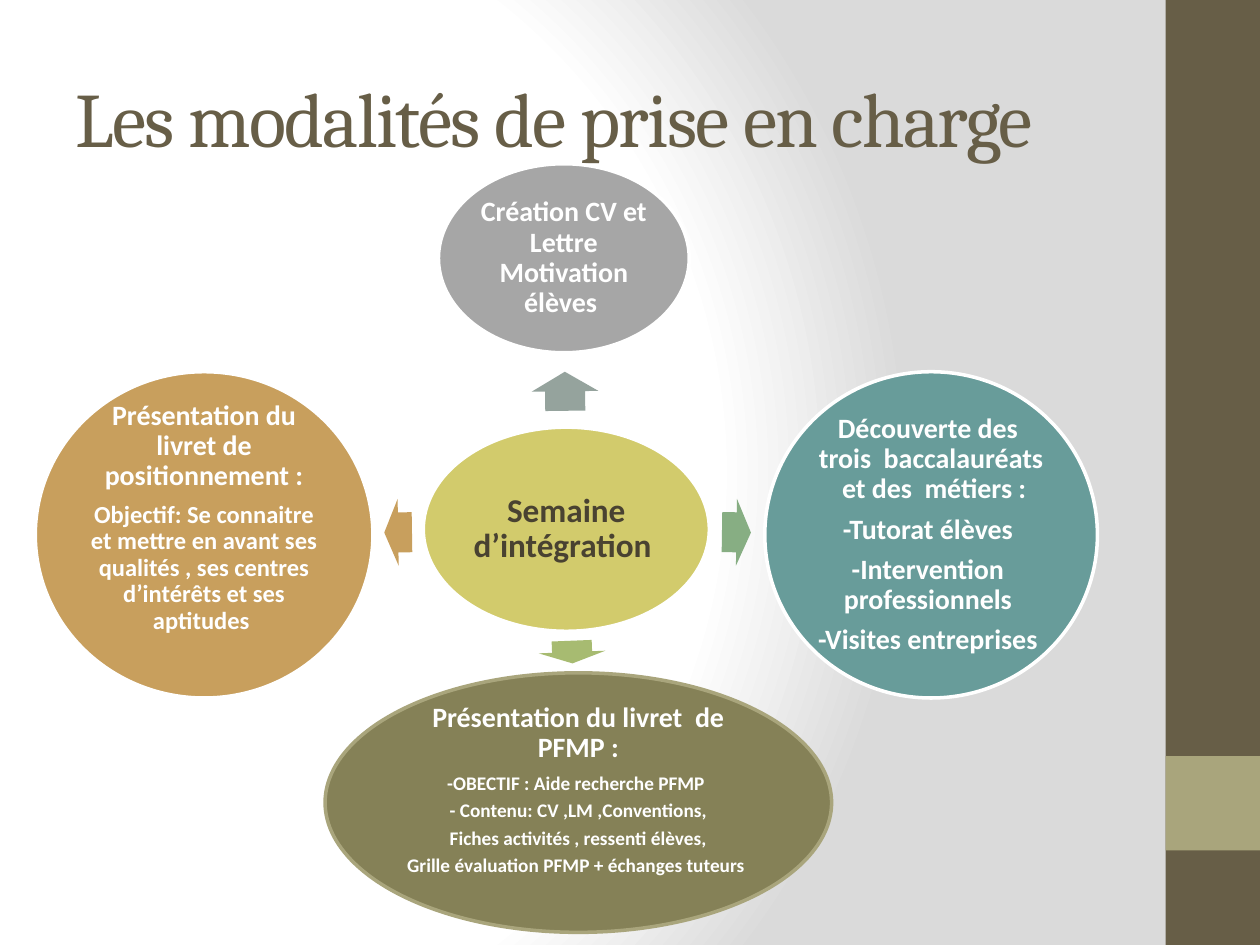
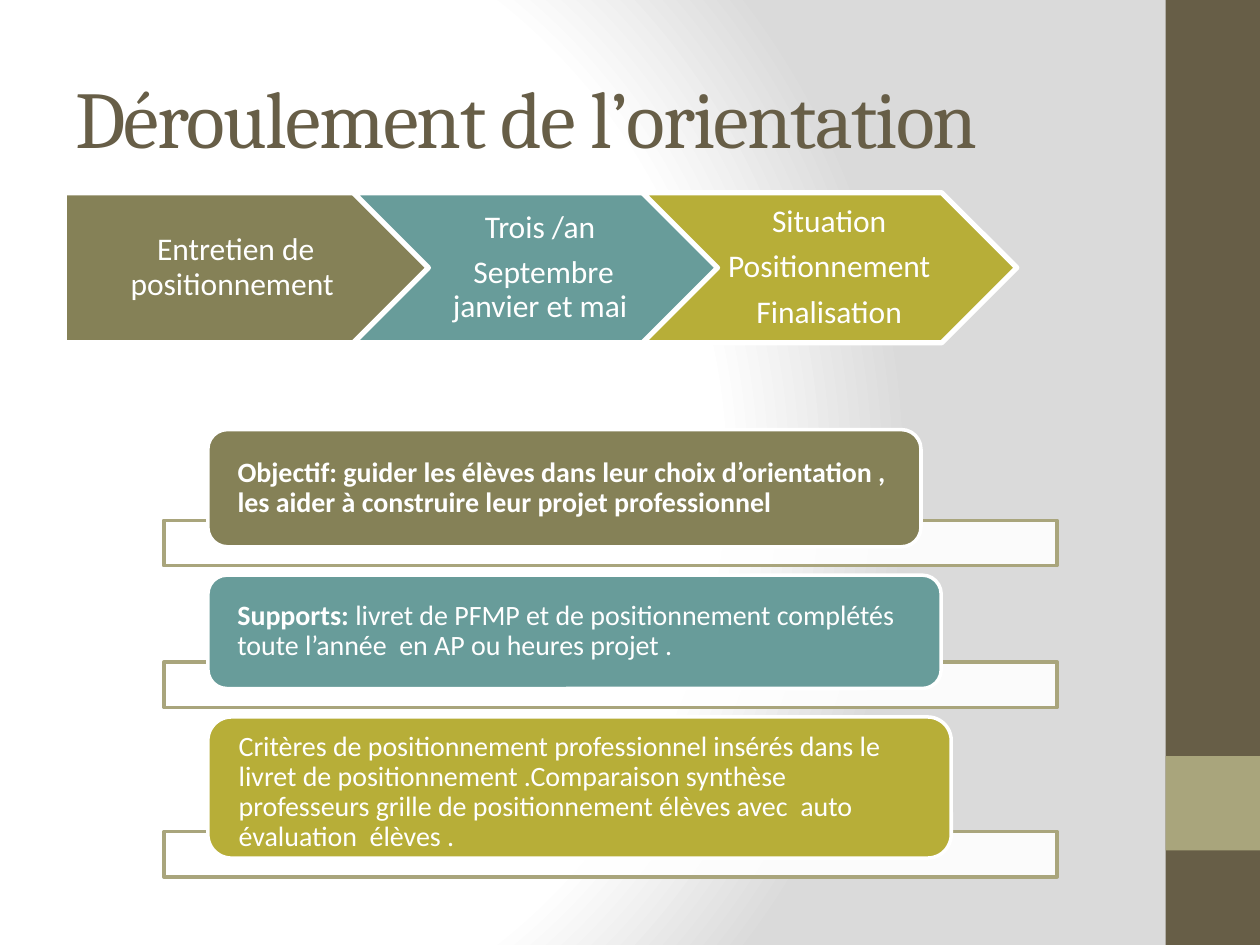
from pptx import Presentation, oxml
from pptx import util as u
from pptx.dml import color
from pptx.enum import shapes, text
from pptx.oxml import ns

RGBColor = color.RGBColor
Inches = u.Inches
SHAPE = shapes.MSO_SHAPE
ALIGN = text.PP_ALIGN

WHITE = RGBColor(0xFF, 0xFF, 0xFF)
BROWN = RGBColor(0x67, 0x5E, 0x47)
DARK_BROWN = RGBColor(0x49, 0x42, 0x31)
KHAKI = RGBColor(0xA9, 0xA5, 0x7C)
OLIVE = RGBColor(0x85, 0x81, 0x57)
TEAL = RGBColor(0x68, 0x9C, 0x9A)
MUSTARD = RGBColor(0xB7, 0xAE, 0x38)
YELLOW = RGBColor(0xD2, 0xCB, 0x6C)
GREY = RGBColor(0xA6, 0xA6, 0xA6)
OCHRE = RGBColor(0xC8, 0x9F, 0x5D)
GREY_GREEN = RGBColor(0x95, 0xA3, 0x9D)
GREEN = RGBColor(0x87, 0xAE, 0x83)
LIME = RGBColor(0xA7, 0xBB, 0x71)

TITLE_FONT = "Cambria"
BODY_FONT = "Calibri"
GRADIENT = f"""<a:gradFill rotWithShape="1" {ns.nsdecls("a")}><a:gsLst>
<a:gs pos="0"><a:srgbClr val="FFFFFF"/></a:gs>
<a:gs pos="75000"><a:srgbClr val="FFFFFF"/></a:gs>
<a:gs pos="100000"><a:srgbClr val="DADADA"/></a:gs></a:gsLst>
<a:path path="circle"><a:fillToRect l="20000" t="50000" r="100000" b="50000"/></a:path>
</a:gradFill>"""


def add_block(slide, kind, box, fill, line=None, line_width=2):
    shape = slide.shapes.add_shape(kind, *(Inches(length) for length in box))
    shape.shadow.inherit = False
    shape.fill.solid()
    shape.fill.fore_color.rgb = fill
    if line is None:
        shape.line.fill.background()
    else:
        shape.line.color.rgb = line
        shape.line.width = u.Pt(line_width)
    return shape


def style_run(run, size, bold, font_color):
    run.font.name = BODY_FONT
    run.font.size = u.Pt(size)
    run.font.bold = bold
    run.font.color.rgb = font_color


def write(shape, lines, size, bold=False, font_color=WHITE,
          align=ALIGN.CENTER, margins=(0.02, 0.02, 0.02, 0.02)):
    frame = shape.text_frame
    frame.word_wrap = True
    frame.vertical_anchor = text.MSO_ANCHOR.MIDDLE
    (frame.margin_left, frame.margin_top,
     frame.margin_right, frame.margin_bottom) = map(Inches, margins)
    for index, line in enumerate(lines):
        content, line_size = line if isinstance(line, tuple) else (line, size)
        paragraph = frame.paragraphs[0] if index == 0 else frame.add_paragraph()
        paragraph.text = content
        paragraph.alignment = align
        paragraph.line_spacing = 0.9
        paragraph.space_after = u.Pt(round(0.35 * line_size, 1))
        style_run(paragraph.runs[0], line_size, bold, font_color)
    return frame


def add_base(presentation, title, title_size):
    slide = presentation.slides.add_slide(presentation.slide_layouts[6])
    slide.background.fill.gradient()
    gradient = slide.element.find(".//" + ns.qn("a:gradFill"))
    gradient.getparent().replace(gradient, oxml.parse_xml(GRADIENT))
    add_block(slide, SHAPE.RECTANGLE, (9.25, 0, 0.75, 7.5), BROWN)
    add_block(slide, SHAPE.RECTANGLE, (9.25, 6, 0.75, 0.75), KHAKI)
    box = slide.shapes.add_textbox(Inches(0.5), Inches(0.3), Inches(8.33), Inches(1.25))
    frame = box.text_frame
    frame.word_wrap = True
    frame.vertical_anchor = text.MSO_ANCHOR.MIDDLE
    frame.text = title
    run = frame.paragraphs[0].runs[0]
    run.font.name = TITLE_FONT
    run.font.size = u.Pt(title_size)
    run.font.color.rgb = BROWN
    run.font._element.set("spc", "-100")
    return slide


def add_hub(slide, left, top):
    def place(x, y, width, height):
        return left + x, top + y, width, height

    arrows = [
        ((4.05, 1.54, 0.31, 0.53), 269.3, GREY_GREEN),
        ((5.45, 2.66, 0.23, 0.53), 0.9, GREEN),
        ((4.17, 3.61, 0.18, 0.53), 87.7, LIME),
        ((2.77, 2.66, 0.22, 0.53), 179.1, OCHRE),
    ]
    for box, rotation, fill in arrows:
        arrow = add_block(slide, SHAPE.RIGHT_ARROW, place(*box), fill)
        arrow.adjustments[0] = 0.6
        arrow.adjustments[1] = 0.5
        arrow.rotation = rotation

    center = add_block(slide, SHAPE.OVAL, place(3.08, 2.09, 2.27, 1.62), YELLOW, WHITE)
    write(center, ["Semaine d’intégration "], 19, True, DARK_BROWN, margins=(0.03,) * 4)

    bubbles = [
        ((3.2, 0, 1.99, 1.5), GREY, WHITE, 0.02,
         ["Création CV et Lettre Motivation élèves "]),
        ((5.79, 1.65, 2.64, 2.59), TEAL, WHITE, 0.02,
         ["Découverte des  trois  baccalauréats  et des  métiers :",
          "-Tutorat élèves ", "-Intervention  professionnels ",
          "-Visites entreprises "]),
        ((2.3, 4.04, 4.02, 2.06), OLIVE, KHAKI, 0.22,
         ["Présentation du livret  de PFMP :",
          ("-OBECTIF : Aide recherche PFMP ", 11),
          ("- Contenu: CV ,LM ,Conventions,", 11),
          ("Fiches activités , ressenti élèves,", 11),
          ("Grille évaluation PFMP + échanges tuteurs ", 11)]),
        ((0, 1.65, 2.68, 2.59), OCHRE, WHITE, 0.29,
         ["Présentation du livret de positionnement :",
          ("Objectif: Se connaitre et mettre en avant ses qualités , "
           "ses centres d’intérêts et ses aptitudes ", 14)]),
    ]
    for box, fill, line, bottom, lines in bubbles:
        bubble = add_block(slide, SHAPE.OVAL, place(*box), fill, line)
        write(bubble, lines, 16, True, margins=(0.02, 0.02, 0.02, bottom))


def add_steps(slide, left, top, width=2.97, height=1.19, pitch=2.295):
    steps = [
        (SHAPE.PENTAGON, OLIVE, ["Entretien de positionnement "]),
        (SHAPE.CHEVRON, TEAL, ["Trois /an ", "Septembre janvier et mai "]),
        (SHAPE.CHEVRON, MUSTARD, ["Situation ", "Positionnement ", "Finalisation "]),
    ]
    for index, (kind, fill, lines) in enumerate(steps):
        box = (left + index * pitch, top, width, height)
        step = add_block(slide, kind, box, fill, WHITE, 3)
        write(step, lines, 18, margins=(0.08, 0.05, 0.03, 0.05))


def add_cards(slide, left, top, width):
    cards = [
        (5.66, 0.93, OLIVE, 0,
         "Objectif: guider les élèves dans leur choix d’orientation , "
         "les aider à construire leur projet professionnel", ""),
        (5.82, 0.9, TEAL, 0, "Supports: ",
         "livret de PFMP et de positionnement complétés toute l’année  "
         "en AP ou heures projet ."),
        (5.9, 1.12, MUSTARD, 0.08, "",
         "Critères de positionnement professionnel insérés dans le livret de "
         "positionnement .Comparaison synthèse professeurs grille de "
         "positionnement élèves avec  auto évaluation  élèves ."),
    ]
    for card_width, height, fill, inset, strong, plain in cards:
        strip = add_block(slide, SHAPE.RECTANGLE,
                          (left, top + height - 0.21, width, 0.36), WHITE, KHAKI)
        white = strip.fill._xPr.find(".//" + ns.qn("a:srgbClr"))
        white.append(oxml.parse_xml(f'<a:alpha val="90000" {ns.nsdecls("a")}/>'))
        card = add_block(slide, SHAPE.ROUNDED_RECTANGLE,
                         (left + 0.35, top, card_width, height), fill, WHITE)
        frame = write(card, [strong or plain], 16, bool(strong), align=ALIGN.LEFT,
                      margins=(0.19, inset, 0.19, 0))
        if strong and plain:
            run = frame.paragraphs[0].add_run()
            run.text = plain
            style_run(run, 16, False, WHITE)
        top += height + 0.225


def main():
    presentation = Presentation()
    presentation.slide_width = Inches(10)
    presentation.slide_height = Inches(7.5)
    support = add_base(presentation, "Les modalités de prise en charge", 44)
    add_hub(support, 0.28, 1.3)
    guidance = add_base(presentation, "Déroulement de l’orientation", 46)
    add_steps(guidance, 0.51, 1.53)
    add_cards(guidance, 1.3, 3.41, 7.09)
    presentation.save("out.pptx")


if __name__ == "__main__":
    main()
